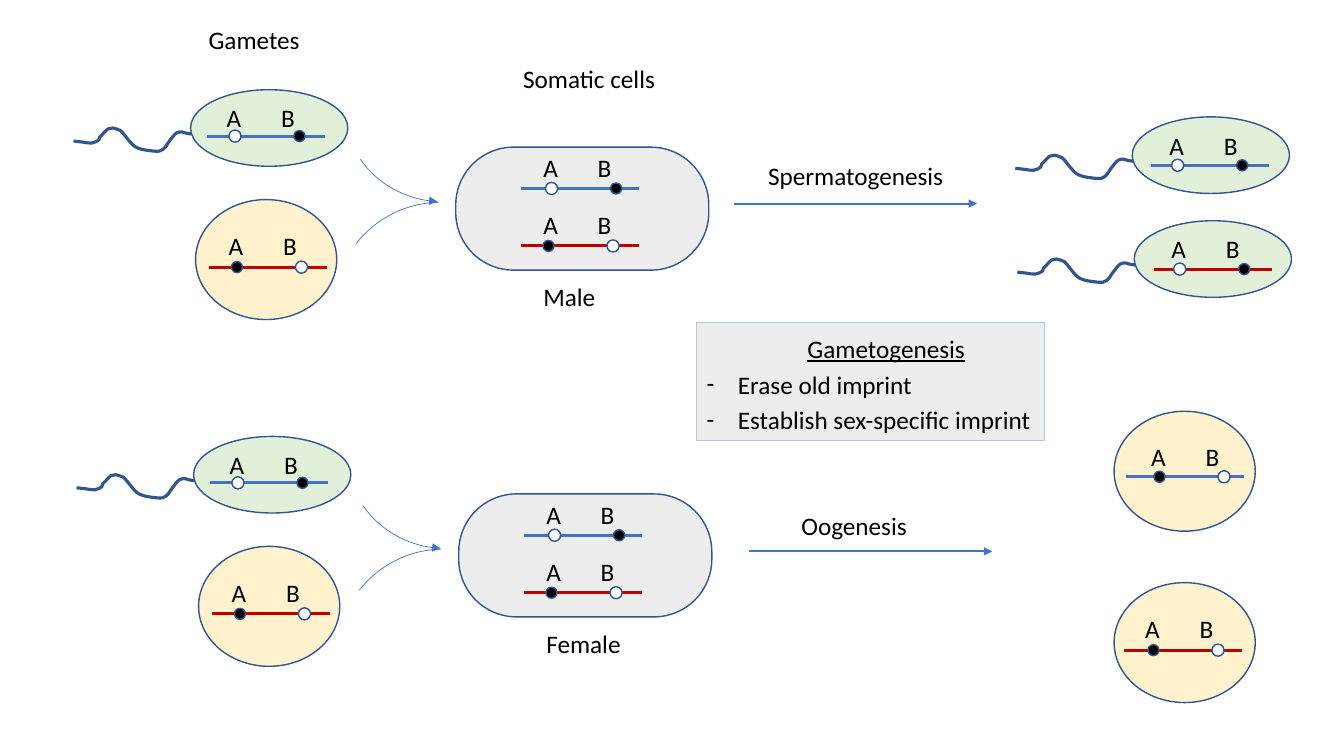
import lxml.etree
import pptx
import pptx.util
import pptx.dml.color
import pptx.enum.shapes
import pptx.enum.text
import pptx.oxml.ns

Inches, Pt = pptx.util.Inches, pptx.util.Pt
hue = pptx.dml.color.RGBColor.from_string
qn = pptx.oxml.ns.qn
kinds = pptx.enum.shapes.MSO_SHAPE

EDGE, BLUE, RED = "325491", "4472C4", "C00000"
GREEN, CREAM, GREY = "E2F0D9", "FFF2CC", "EDEDED"
WHITE, BLACK = "FFFFFF", "000000"

deck = pptx.Presentation()
deck.slide_width, deck.slide_height = Inches(13.33), Inches(7.5)
slide = deck.slides.add_slide(deck.slide_layouts[6])
shapes = slide.shapes


def dress(shape, fill, edge, width):
    """Give a shape its fill (None for no fill) and outline, without shadow."""
    if fill:
        shape.fill.solid()
        shape.fill.fore_color.rgb = hue(fill)
    else:
        shape.fill.background()
    shape.line.color.rgb = hue(edge)
    shape.line.width = Pt(width)
    shape.shadow.inherit = False


def add_form(kind, left, top, width, height, fill, edge=EDGE, weight=1):
    form = shapes.add_shape(kind, Inches(left), Inches(top),
                            Inches(width), Inches(height))
    dress(form, fill, edge, weight)
    return form


# Places: heads and eggs by top left corner
heads = [(11.23, 1.16), (11.25, 2.19)]
eggs = [(11.05, 4.08), (11.05, 5.78)]
cells = []
# label left, label top, line left, line height, mark shift, colour, A is white
genes = [
    (11.5, 1.24, 11.42, 1.64, 0, BLUE, True),
    (11.52, 2.27, 11.45, 2.67, 0, RED, True),
    (11.32, 4.33, 11.17, 4.73, 0, BLUE, False),
    (11.26, 6.04, 11.15, 6.45, 0, RED, False),
]
labels = [
    ("Gametes", 1.97, 0.19, 1.11),
    ("Somatic cells", 5.09, 0.58, 1.52),
    ("Male", 5.29, 2.74, 0.72),
    ("Female", 5.32, 6.18, 0.95),
    ("Spermatogenesis", 7.52, 1.54, 1.96),
    ("Oogenesis", 7.85, 5.01, 1.26),
]
# left, top, turn, start, end, has arrowhead
arcs = [
    (3.29, 2.03, 322.6, 152.284, 185.882, False),
    (3.41, 0.09, 169.8, 171.233, 202.903, True),
]

# The male and female crosses share one layout
for dx, dy in [(0, 0), (0.03, 3.44)]:
    heads.append((1.89 + dx, 0.89 + dy))
    eggs.append((1.94 + dx, 1.98 + dy))
    cells.append((4.52 + dx, 1.46 + dy))
    for left, top, start, high, shift, tint, pale in [
        (2.15, 0.97, 2.05, 1.35, 0, BLUE, True),
        (2.17, 2.24, 2.07, 2.65, 0, RED, False),
        (5.29, 1.46, 5.17, 1.87, 0, BLUE, True),
        (5.29, 2.03, 5.17, 2.44, -0.03, RED, False),
    ]:
        genes.append((left + dx, top + dy, start + dx, high + dy, shift, tint, pale))
    for left, top, turn, start, end, tip in arcs:
        arc = add_form(kinds.ARC, left + dx, top + dy, 2.03, 1.91,
                       None, BLUE, 0.5)
        arc.rotation = turn
        arc.adjustments[0], arc.adjustments[1] = start, end
        if tip:
            stroke = arc.element.spPr.find(qn("a:ln"))
            lxml.etree.SubElement(stroke, qn("a:headEnd"), type="triangle")

# Cell bodies
for left, top in heads:
    add_form(kinds.OVAL, left, top, 1.56, 0.76, GREEN)
for left, top in eggs:
    add_form(kinds.OVAL, left, top, 1.4, 1.19, CREAM)
for left, top in cells:
    cell = add_form(kinds.ROUNDED_RECTANGLE, left, top, 2.51, 1.22, GREY)
    cell.adjustments[0] = 0.47

# Tails: knots measured from the head's corner, joined by smooth curves
knots = [
    (0.01, 0.44), (-0.05, 0.43), (-0.08, 0.42), (-0.14, 0.43), (-0.21, 0.51),
    (-0.23, 0.54), (-0.25, 0.57), (-0.31, 0.61), (-0.44, 0.6), (-0.52, 0.58),
    (-0.58, 0.54), (-0.68, 0.42), (-0.71, 0.4), (-0.77, 0.38), (-0.82, 0.39),
    (-0.87, 0.44), (-0.9, 0.47), (-0.91, 0.5), (-0.98, 0.53), (-1.07, 0.52),
    (-1.16, 0.51),
]
for left, top in heads:
    points = [(Inches(left + x), Inches(top + y)) for x, y in knots]
    pen = shapes.build_freeform(*points[0])
    pen.add_line_segments(points[1:], close=False)
    tail = pen.convert_to_shape()
    dress(tail, None, EDGE, 2.25)
    spots = [(int(pt.get("x")), int(pt.get("y")))
             for pt in tail.element.spPr.iter(qn("a:pt"))]
    ends = [spots[0]] + spots + [spots[-1]]
    steps = list(tail.element.spPr.iter(qn("a:lnTo")))
    for step, a, b, c, d in zip(steps, ends, ends[1:], ends[2:], ends[3:]):
        bend = lxml.etree.Element(qn("a:cubicBezTo"))
        first = [b[i] + (c[i] - a[i]) // 6 for i in (0, 1)]
        second = [c[i] - (d[i] - b[i]) // 6 for i in (0, 1)]
        for x, y in (first, second, c):
            lxml.etree.SubElement(bend, qn("a:pt"), x=str(x), y=str(y))
        step.getparent().replace(step, bend)

# Chromosomes and process arrows
lines = [(7.28, 2.02, 2.41, BLUE, 1.5, True), (7.43, 5.47, 2.41, BLUE, 1.5, True)]
for left, top, start, high, shift, tint, pale in genes:
    lines.append((start, high, 1.17, tint, 2.25, False))
    labels.append(("A\tB", left, top, 1))
for left, high, length, tint, weight, tip in lines:
    line = shapes.add_connector(
        pptx.enum.shapes.MSO_CONNECTOR.STRAIGHT, Inches(left), Inches(high),
        Inches(left + length), Inches(high))
    line.line.color.rgb = hue(tint)
    line.line.width = Pt(weight)
    frame = line.element.spPr
    if tip:
        lxml.etree.SubElement(frame.find(qn("a:ln")), qn("a:tailEnd"), type="triangle")
    lxml.etree.SubElement(frame, qn("a:effectLst"))

# Imprint marks under A and B
for left, top, start, high, shift, tint, pale in genes:
    for gap, white in [(0.18, pale), (0.82, not pale)]:
        size = 0.12 if white else 0.11
        add_form(kinds.OVAL, left + gap + shift - size / 2, high - size / 2,
                 size, size, WHITE if white else BLACK)

# Labels
for words, left, top, width in labels:
    box = shapes.add_textbox(Inches(left), Inches(top), Inches(width), Inches(0.4))
    box.text_frame.word_wrap = "\t" in words
    para = box.text_frame.paragraphs[0]
    run = para.add_run()
    run.text = words
    run.font.size, run.font.name = Pt(18), "Calibri"
    run.font.color.rgb = hue(BLACK)
    if "\t" in words:
        stops = lxml.etree.SubElement(para._p.get_or_add_pPr(), qn("a:tabLst"))
        lxml.etree.SubElement(stops, qn("a:tab"), pos=str(Inches(0.54)), algn="l")

# Gametogenesis note
note = add_form(kinds.RECTANGLE, 6.91, 3.2, 3.45, 1.17, GREY, "B4C7E7", 0.75)
text = note.text_frame
text.word_wrap = False
text.vertical_anchor = pptx.enum.text.MSO_ANCHOR.TOP
for i, (parts, dash) in enumerate([
    (["\t", "Gametogenesis"], False),
    (["Erase old imprint"], True),
    (["Establish sex-specific imprint"], True),
]):
    para = text.add_paragraph() if i else text.paragraphs[0]
    para.alignment = pptx.enum.text.PP_ALIGN.LEFT
    para.line_spacing = Pt(25.6)
    for part in parts:
        run = para.add_run()
        run.text = part
        run.font.size, run.font.name = Pt(18), "Calibri"
        run.font.color.rgb = hue(BLACK)
        run.font.underline = part == "Gametogenesis"
    props = para._p.get_or_add_pPr()
    if dash:
        props.set("marL", str(Inches(0.31)))
        props.set("indent", str(-Inches(0.31)))
        lxml.etree.SubElement(props, qn("a:buFont"), typeface="Calibri")
        lxml.etree.SubElement(props, qn("a:buChar"), char="-")
    else:
        stops = lxml.etree.SubElement(props, qn("a:tabLst"))
        lxml.etree.SubElement(stops, qn("a:tab"), pos=str(Inches(1)), algn="l")

deck.save("out.pptx")
